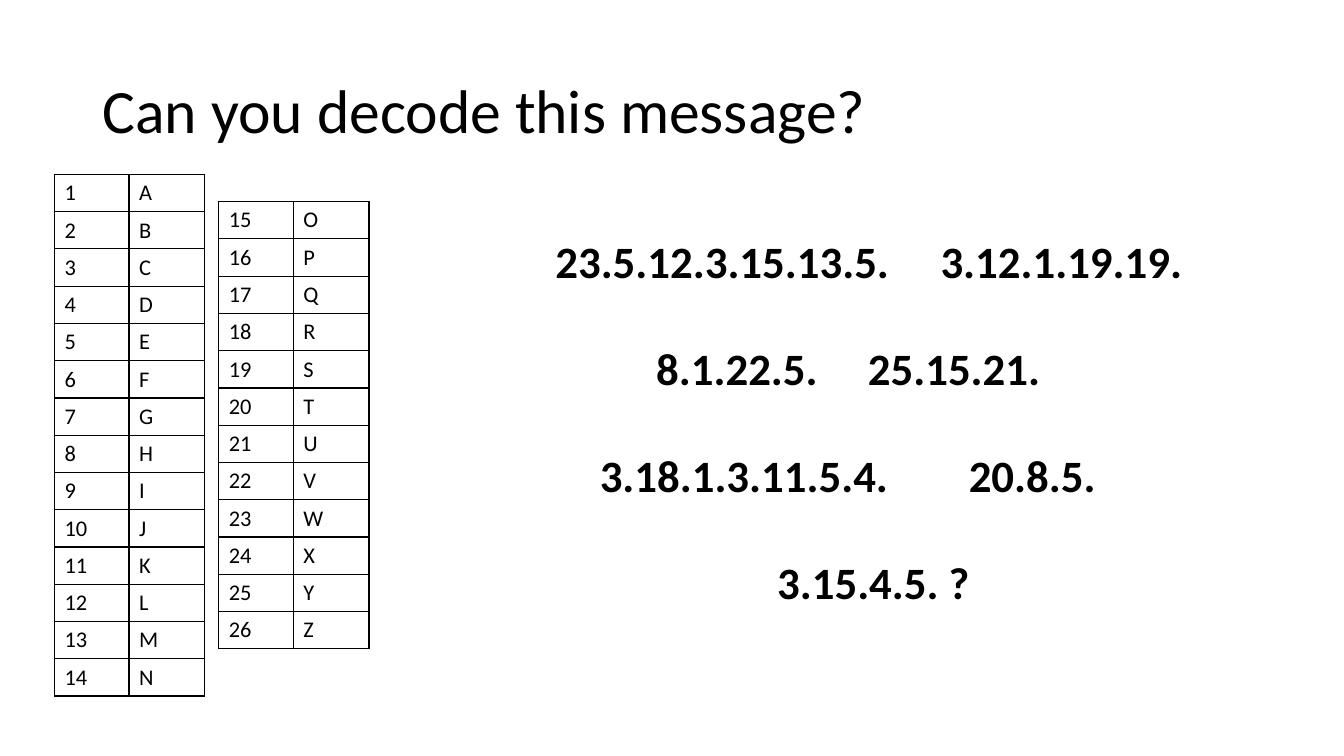
from dataclasses import dataclass

from lxml import etree
from pptx import Presentation
from pptx import util as u
from pptx.dml import color
from pptx.enum import text
from pptx.oxml import ns

EMU_PER_PX = 9144


@dataclass(frozen=True)
class Theme:
    font: str = "Calibri"
    ink: color.RGBColor = color.RGBColor(0, 0, 0)
    title_size: int = 44
    key_size: int = 16
    code_size: int = 32
    code_gap: int = 38
    border: int = 1


@dataclass(frozen=True)
class KeyTable:
    left: int
    top: int
    first: int
    last: int


@dataclass(frozen=True)
class CodeLine:
    words: tuple[str, ...]
    stops: tuple[int, ...]


THEME = Theme()
COLUMN_WIDTHS = (74, 75)
ROW_HEIGHT = 37
KEY_TABLES = (KeyTable(54, 173, 1, 14), KeyTable(217, 200, 15, 26))
MESSAGE = (
    CodeLine(("23.5.12.3.15.13.5.", "3.12.1.19.19."), (48, 430)),
    CodeLine(("8.1.22.5.", "25.15.21."), (148, 358)),
    CodeLine(("3.18.1.3.11.5.4.", "20.8.5."), (92, 458)),
    CodeLine(("3.15.4.5. ?",), (268,)),
)


def px(length: int) -> u.Emu:
    return u.Emu(length * EMU_PER_PX)


def style_runs(paragraph, size: int, bold: bool = False) -> None:
    for run in paragraph.runs:
        run.font.name = THEME.font
        run.font.size = u.Pt(size)
        run.font.bold = bold
        run.font.color.rgb = THEME.ink


def add_frame(slide, left: int, top: int, width: int, height: int):
    frame = slide.shapes.add_textbox(px(left), px(top), px(width), px(height)).text_frame
    frame.word_wrap = True
    return frame


def add_title(slide, wording: str) -> None:
    frame = add_frame(slide, 92, 40, 1150, 145)
    frame.vertical_anchor = text.MSO_ANCHOR.MIDDLE
    frame.text = wording
    heading = frame.paragraphs[0]
    heading.line_spacing = 0.9
    style_runs(heading, THEME.title_size)


def add_borders(cell) -> None:
    properties = cell._tc.get_or_add_tcPr()
    for position, side in enumerate("LRTB"):
        line = etree.Element(ns.qn(f"a:ln{side}"), w=str(u.Pt(THEME.border)))
        fill = etree.SubElement(line, ns.qn("a:solidFill"))
        etree.SubElement(fill, ns.qn("a:srgbClr"), val=str(THEME.ink))
        properties.insert(position, line)


def add_key_table(slide, key: KeyTable) -> None:
    count = key.last - key.first + 1
    table = slide.shapes.add_table(
        count, len(COLUMN_WIDTHS), px(key.left), px(key.top),
        px(sum(COLUMN_WIDTHS)), px(count * ROW_HEIGHT),
    ).table
    table.first_row = False
    table.horz_banding = False
    for column, width in zip(table.columns, COLUMN_WIDTHS):
        column.width = px(width)
    for number, row in enumerate(table.rows, key.first):
        row.height = px(ROW_HEIGHT)
        letter = chr(ord("A") + number - 1)
        for cell, entry in zip(row.cells, (str(number), letter)):
            cell.text_frame.text = entry
            cell.fill.background()
            add_borders(cell)
            style_runs(cell.text_frame.paragraphs[0], THEME.key_size)


def add_message(slide, lines: tuple[CodeLine, ...]) -> None:
    frame = add_frame(slide, 493, 227, 748, 387)
    for index, line in enumerate(lines):
        paragraph = frame.add_paragraph() if index else frame.paragraphs[0]
        paragraph.text = "".join(f"\t{word}" for word in line.words)
        paragraph.alignment = text.PP_ALIGN.LEFT
        paragraph.space_before = u.Pt(THEME.code_gap if index else 0)
        tabs = etree.SubElement(paragraph._p.get_or_add_pPr(), ns.qn("a:tabLst"))
        for stop in line.stops:
            etree.SubElement(tabs, ns.qn("a:tab"), pos=str(px(stop)), algn="l")
        style_runs(paragraph, THEME.code_size, bold=True)


def main() -> None:
    deck = Presentation()
    deck.slide_width, deck.slide_height = px(1333), px(750)
    slide = deck.slides.add_slide(deck.slide_layouts[6])
    add_title(slide, "Can you decode this message?")
    for key in KEY_TABLES:
        add_key_table(slide, key)
    add_message(slide, MESSAGE)
    deck.save("out.pptx")


if __name__ == "__main__":
    main()
